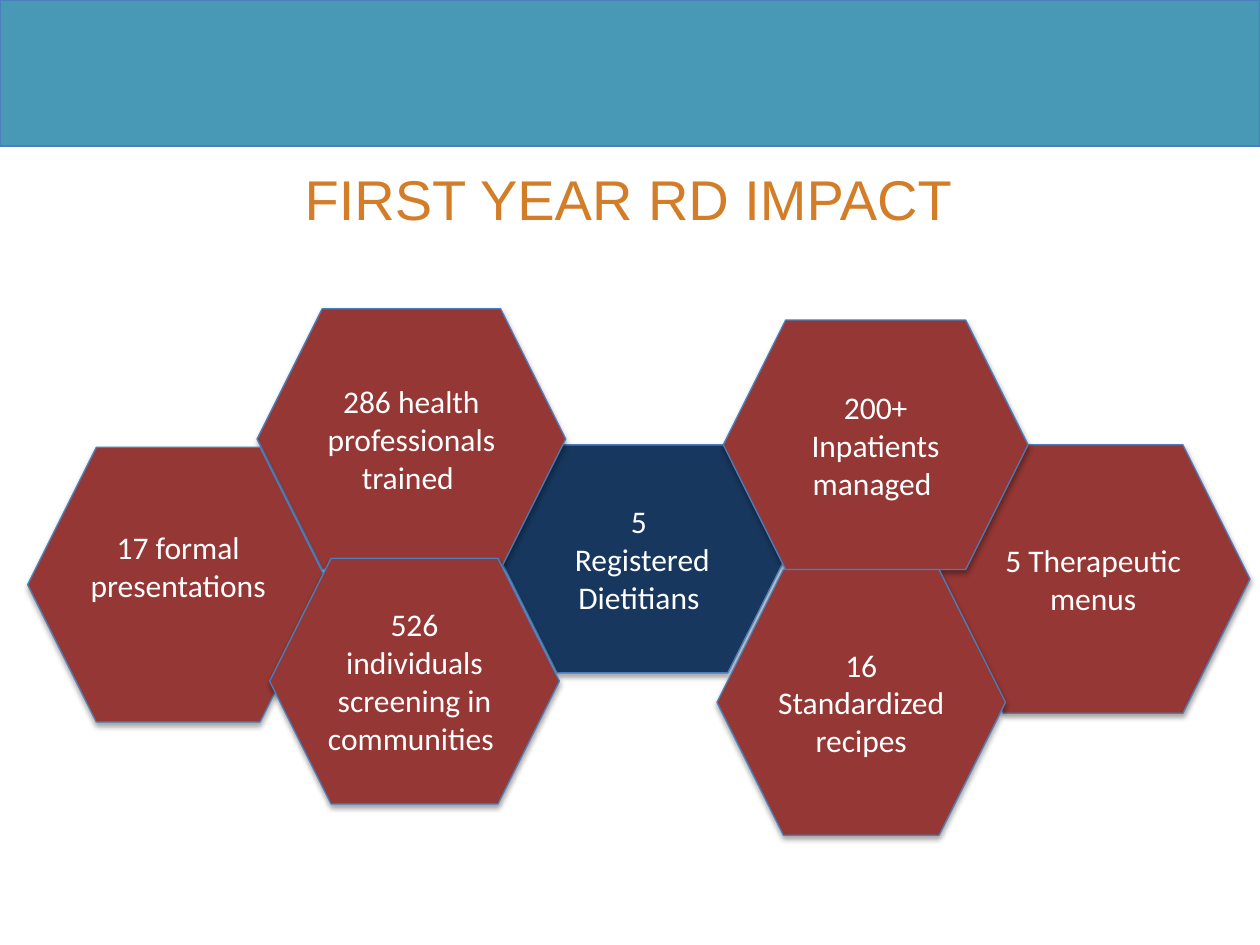
from lxml import etree
from pptx import Presentation
from pptx.dml.color import RGBColor
from pptx.enum import shapes, text
from pptx.oxml import ns
from pptx.util import Pt

TEAL = RGBColor(0x47, 0x99, 0xB5)
BLUE = RGBColor(0x4B, 0x7E, 0xBC)
NAVY = RGBColor(0x17, 0x37, 0x5E)
RED = RGBColor(0x95, 0x37, 0x35)
ORANGE = RGBColor(0xD3, 0x7D, 0x28)
WHITE = RGBColor(0xFF, 0xFF, 0xFF)

# (left, top, width, height), fill, text, extra space below the text; back to front
HEXAGONS = [
    ((285.8, 254.2, 162.7, 130.3), NAVY, "5 \nRegistered Dietitians ", 0),
    ((535, 254.2, 179.3, 153.4), RED, "5 Therapeutic menus", 0),
    ((146.9, 176.4, 176.4, 149), RED, "286 health professionals trained ", 0),
    ((413.3, 182.9, 174.2, 142.6), RED, "200+ Inpatients managed ", 0),
    ((15.8, 255.6, 172.1, 157), RED, "17 formal presentations", 21.6),
    ((409.7, 325.4, 164.9, 151.9), RED, "16 Standardized recipes", 0),
    ((154.1, 319, 165.6, 140.4), RED, "526 individuals screening in communities ", 0),
]


def add_panel(s, kind, box, fill):
    sp = s.shapes.add_shape(kind, *map(Pt, box))
    sp.shadow.inherit = False
    sp.fill.solid()
    sp.fill.fore_color.rgb = fill
    sp.line.color.rgb = BLUE
    sp.line.width = Pt(0.75)
    return sp


def format_text(tf, font, size, color):
    tf.word_wrap = True
    for p in tf.paragraphs:
        p.alignment = text.PP_ALIGN.CENTER
        for r in p.runs:
            r.font.name = font
            r.font.size = Pt(size)
            r.font.color.rgb = color


def add_drop_shadow(sp):
    """Fill the shape's empty effect list with a soft shadow straight below."""
    effects = sp.element.spPr.find(ns.qn("a:effectLst"))
    shadow = etree.SubElement(
        effects, ns.qn("a:outerShdw"), blurRad=str(Pt(3.1)), dist=str(Pt(1.8)),
        dir="5400000", rotWithShape="0")
    color = etree.SubElement(shadow, ns.qn("a:srgbClr"), val="000000")
    etree.SubElement(color, ns.qn("a:alpha"), val="35000")


def add_title(s, box):
    tf = s.shapes.add_textbox(*map(Pt, box)).text_frame
    tf.margin_bottom = 0
    tf.text = "FIRST YEAR RD IMPACT"
    format_text(tf, "Arial", 32, ORANGE)


def add_hexagon(s, box, fill, label, space_below):
    sp = add_panel(s, shapes.MSO_SHAPE.HEXAGON, box, fill)
    add_drop_shadow(sp)
    tf = sp.text_frame
    tf.vertical_anchor = text.MSO_ANCHOR.MIDDLE
    tf.margin_bottom = Pt(3.6 + space_below)
    tf.text = label
    format_text(tf, "Calibri", 18, WHITE)


def main():
    prs = Presentation()
    prs.slide_width, prs.slide_height = Pt(720), Pt(540)
    s = prs.slides.add_slide(prs.slide_layouts[6])
    add_panel(s, shapes.MSO_SHAPE.RECTANGLE, (0, 0, 720, 83.5), TEAL)
    add_title(s, (35.3, 90.7, 648, 41))
    for hexagon in HEXAGONS:
        add_hexagon(s, *hexagon)
    prs.save("out.pptx")


if __name__ == "__main__":
    main()
